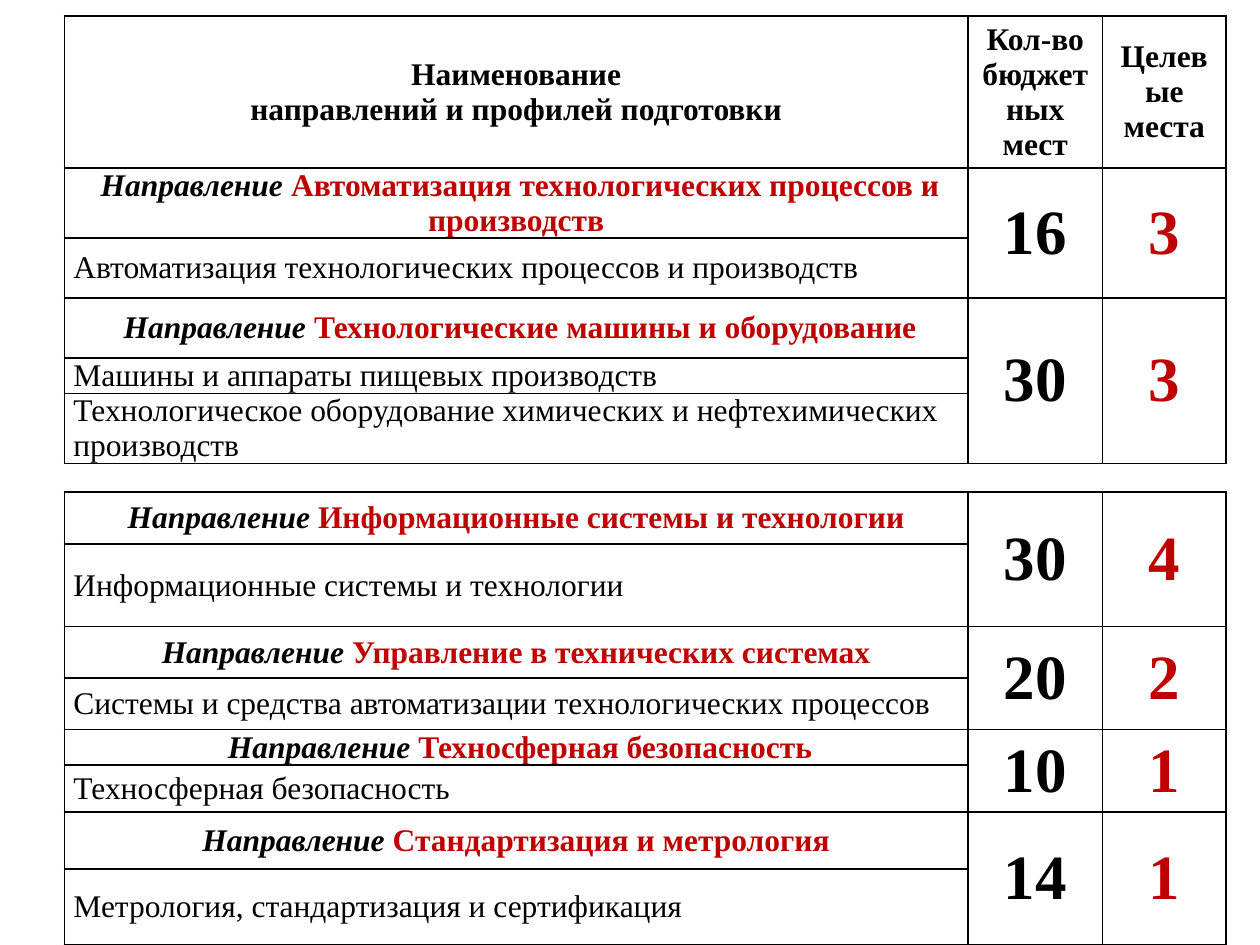
from dataclasses import dataclass, field

from lxml.etree import SubElement
from pptx import Presentation
from pptx.dml.color import RGBColor
from pptx.enum.text import MSO_ANCHOR, PP_ALIGN
from pptx.oxml.ns import qn
from pptx.util import Cm, Pt

COLORS = {"black": "000000", "red": "C00000"}
FONT = "Times New Roman"
LEFT = 1.3
COL_WIDTHS = (18.21, 2.72, 2.48)
CENTER, JUSTIFY, START = PP_ALIGN.CENTER, PP_ALIGN.JUSTIFY, PP_ALIGN.LEFT
NAME_MARGINS = {
    "margin_left": Cm(0.18), "margin_right": Cm(0.18),
    "margin_top": 0, "margin_bottom": 0,
}


@dataclass
class Run:
    text: str
    color: str = "black"
    size: int = 18
    bold: bool = True
    italic: bool = False


@dataclass
class Profile:
    name: str
    height: float
    align: PP_ALIGN = JUSTIFY


@dataclass
class Direction:
    name: str
    height: float
    places: int
    target: int
    profiles: list[Profile]
    prefix: str = "Направление "


@dataclass
class Block:
    top: float
    directions: list[Direction]
    header: list[list[str]] = field(default_factory=list)
    header_height: float = 0


BLOCKS = [
    Block(0.32, [
        Direction("Автоматизация технологических процессов и производств", 1.41, 16, 3, [
            Profile("Автоматизация технологических процессов и производств", 1.21, START),
        ], " Направление "),
        Direction("Технологические машины и оборудование", 1.21, 30, 3, [
            Profile("Машины и аппараты пищевых производств", 0.71),
            Profile("Технологическое оборудование химических и нефтехимических производств",
                    1.41, START),
        ], " Направление "),
    ], [
        ["Наименование", "направлений и профилей подготовки"],
        ["Кол-во бюджетных мест"],
        ["Целевые места"],
    ], 3.07),
    Block(9.92, [
        Direction("Информационные системы и технологии", 1.05, 30, 4, [
            Profile("Информационные системы и технологии", 1.65),
        ]),
        Direction("Управление в технических системах", 1.04, 20, 2, [
            Profile("Системы и средства автоматизации технологических процессов", 1.04, START),
        ]),
        Direction("Техносферная безопасность", 0.71, 10, 1, [
            Profile("Техносферная безопасность", 0.95),
        ], " Направление "),
        Direction("Стандартизация и метрология", 1.15, 14, 1, [
            Profile("Метрология, стандартизация и сертификация", 1.53),
        ]),
    ]),
]


def add_borders(cell) -> None:
    tc_pr = cell._tc.get_or_add_tcPr()
    for i, side in enumerate(("lnL", "lnR", "lnT", "lnB")):
        ln = tc_pr.makeelement(qn(f"a:{side}"), {"w": str(Pt(1))})
        tc_pr.insert(i, ln)
        fill = SubElement(ln, qn("a:solidFill"))
        SubElement(fill, qn("a:srgbClr"), val=COLORS["black"])


def write_cell(cell, paragraphs: list[list[Run]], align: PP_ALIGN = CENTER) -> None:
    tf = cell.text_frame
    for i, runs in enumerate(paragraphs):
        p = tf.add_paragraph() if i else tf.paragraphs[0]
        p.alignment = align
        for run in runs:
            r = p.add_run()
            r.text = run.text
            r.font.color.rgb = RGBColor.from_string(COLORS[run.color])
            formats = {"name": FONT, "size": Pt(run.size),
                       "bold": run.bold, "italic": run.italic}
            for key, value in formats.items():
                setattr(r.font, key, value)


def write_direction(table, row: int, direction: Direction) -> None:
    """Fill the rows of one direction and merge its two number cells."""
    write_cell(table.cell(row, 0), [[
        Run(direction.prefix, italic=True), Run(direction.name, "red"),
    ]])
    last = row + len(direction.profiles)
    numbers = ((direction.places, "black"), (direction.target, "red"))
    for col, (number, color) in enumerate(numbers, 1):
        table.cell(row, col).merge(table.cell(last, col))
        write_cell(table.cell(row, col), [[Run(str(number), color, 36)]])
    for i, profile in enumerate(direction.profiles, row + 1):
        write_cell(table.cell(i, 0), [[Run(profile.name, bold=False)]], profile.align)


def add_block(slide, block: Block) -> None:
    heights = [block.header_height] if block.header else []
    for direction in block.directions:
        heights += [direction.height, *(p.height for p in direction.profiles)]
    table = slide.shapes.add_table(
        len(heights), len(COL_WIDTHS), Cm(LEFT), Cm(block.top),
        Cm(sum(COL_WIDTHS)), Cm(sum(heights)),
    ).table
    table.first_row = table.horz_banding = False
    for column, width in zip(table.columns, COL_WIDTHS):
        column.width = Cm(width)
    for table_row, height in zip(table.rows, heights):
        table_row.height = Cm(height)
        for col, cell in enumerate(table_row.cells):
            cell.fill.background()
            cell.vertical_anchor = MSO_ANCHOR.MIDDLE
            add_borders(cell)
            if col == 0:
                for key, value in NAME_MARGINS.items():
                    setattr(cell, key, value)

    for col, lines in enumerate(block.header):
        write_cell(table.cell(0, col), [[Run(line)] for line in lines])
    row = 1 if block.header else 0
    for direction in block.directions:
        write_direction(table, row, direction)
        row += 1 + len(direction.profiles)


def main() -> None:
    prs = Presentation()
    prs.slide_width, prs.slide_height = Cm(25.4), Cm(19.05)
    slide = prs.slides.add_slide(prs.slide_layouts[6])
    for block in BLOCKS:
        add_block(slide, block)
    prs.save("out.pptx")


if __name__ == "__main__":
    main()
